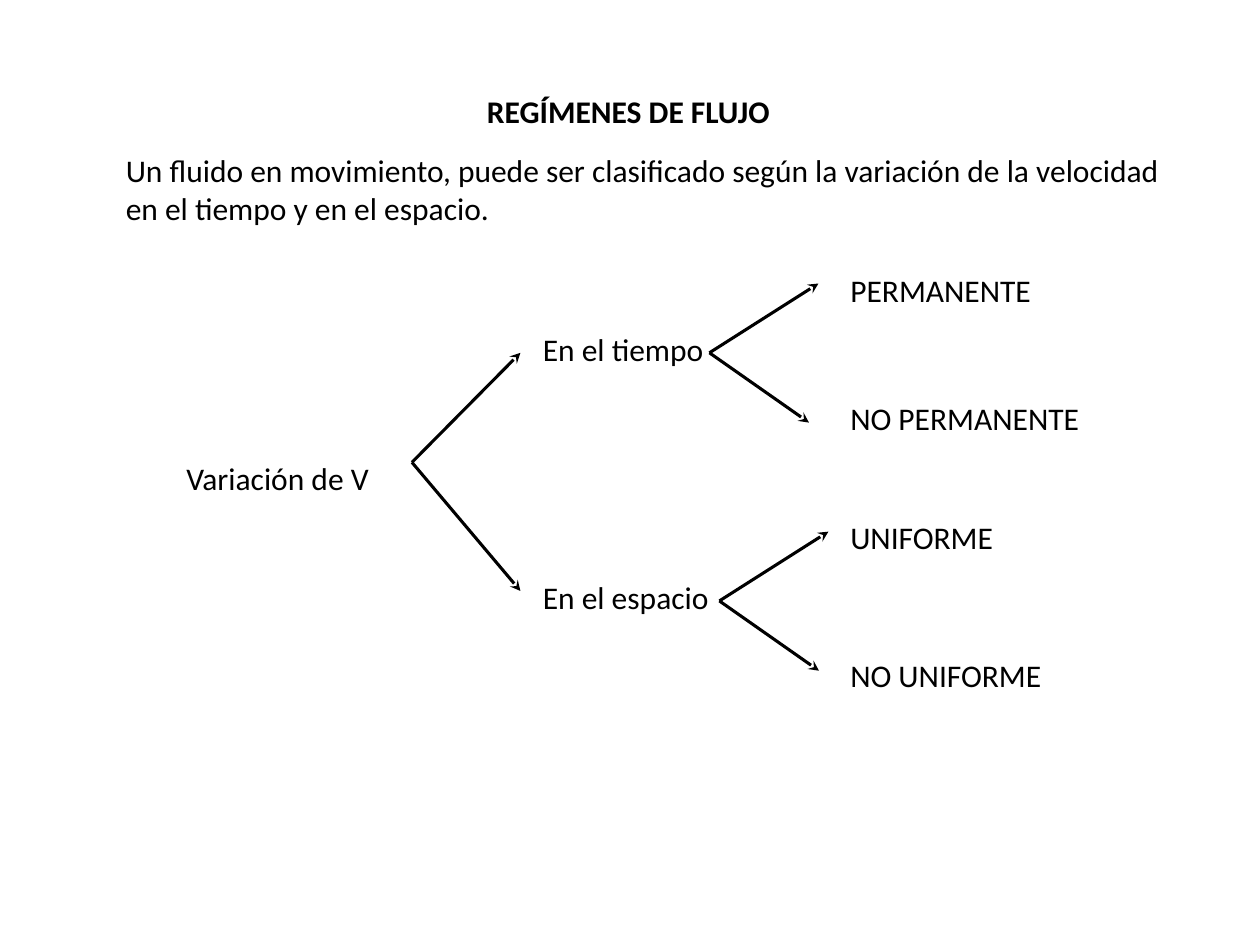
from lxml import etree
from pptx import Presentation
from pptx.dml.color import RGBColor
from pptx.enum.shapes import MSO_CONNECTOR
from pptx.enum.text import MSO_AUTO_SIZE, PP_ALIGN
from pptx.oxml.ns import qn
from pptx.util import Pt

STRAIGHT = MSO_CONNECTOR.STRAIGHT
FIT_SHAPE = MSO_AUTO_SIZE.SHAPE_TO_FIT_TEXT
LEFT, RIGHT = PP_ALIGN.LEFT, PP_ALIGN.RIGHT

FONT = "Calibri"
BLACK = "000000"
LINE_HEIGHT = 28.8

# Left edges of the two label columns
CRITERION_X, REGIME_X = 303.1, 478.8

# Arrow offsets (dx, dy) from the point where each fork starts
ROOT_FORK = [(62, -62.6), (62, 73.5)]
CRITERION_FORK = [(62.3, -39.6), (56.9, 39.9)]

# Criterion, top, width, fork start, regimes (text, top, width)
CRITERIA = [
    ("En el tiempo", 185, 107.3, (405.4, 201.6),
     [("PERMANENTE", 151.2, 118.8), ("NO PERMANENTE", 224.6, 146.2)]),
    ("En el espacio", 326.9, 110.2, (411.1, 343.4),
     [("UNIFORME", 292.3, 96.5), ("NO UNIFORME", 371.5, 124.6)]),
]


def color(hex_code):
    return RGBColor.from_string(hex_code)


def add_text(slide, text, left, top, width, height=LINE_HEIGHT,
             bold=False, align=LEFT, wrap=False):
    box = slide.shapes.add_textbox(Pt(left), Pt(top), Pt(width), Pt(height))
    frame = box.text_frame
    frame.word_wrap = wrap
    frame.auto_size = FIT_SHAPE
    paragraph = frame.paragraphs[0]
    paragraph.alignment = align
    run = paragraph.add_run()
    run.text = text
    run.font.name = FONT
    run.font.size = Pt(18)
    run.font.bold = bold
    run.font.color.rgb = color(BLACK)


def add_arrow(shapes, start, end):
    arrow = shapes.add_connector(STRAIGHT, *map(Pt, start + end))
    arrow.line.color.rgb = color(BLACK)
    arrow.line.width = Pt(1.75)
    properties = arrow.line._get_or_add_ln()
    etree.SubElement(properties, qn("a:tailEnd"), type="stealth")
    etree.SubElement(properties.getparent(), qn("a:effectLst"))


def add_fork(shapes, start, offsets):
    x, y = start
    for dx, dy in offsets:
        add_arrow(shapes, start, (x + dx, y + dy))


def main():
    prs = Presentation()
    prs.slide_width, prs.slide_height = Pt(720), Pt(540)
    slide = prs.slides.add_slide(prs.slide_layouts[6])

    # Heading and introduction
    add_text(slide, "REGÍMENES DE FLUJO", 269.3, 49, 177.8,
             bold=True, align=RIGHT)
    add_text(slide, "Un fluido en movimiento, puede ser clasificado según la "
             "variación de la velocidad en el tiempo y en el espacio.",
             64.8, 82.8, 617.8, 51.1, wrap=True)

    # Root of the tree
    add_text(slide, "Variación de V", 99.4, 258.5, 120.2)
    add_fork(slide.shapes, (235.4, 264.2), ROOT_FORK)

    # Each criterion with its grouped fork and its regimes
    for criterion, top, width, fork_start, regimes in CRITERIA:
        add_text(slide, criterion, CRITERION_X, top, width)
        add_fork(slide.shapes.add_group_shape().shapes, fork_start,
                 CRITERION_FORK)
        for regime, regime_top, regime_width in regimes:
            add_text(slide, regime, REGIME_X, regime_top, regime_width)

    prs.save("out.pptx")


if __name__ == "__main__":
    main()
